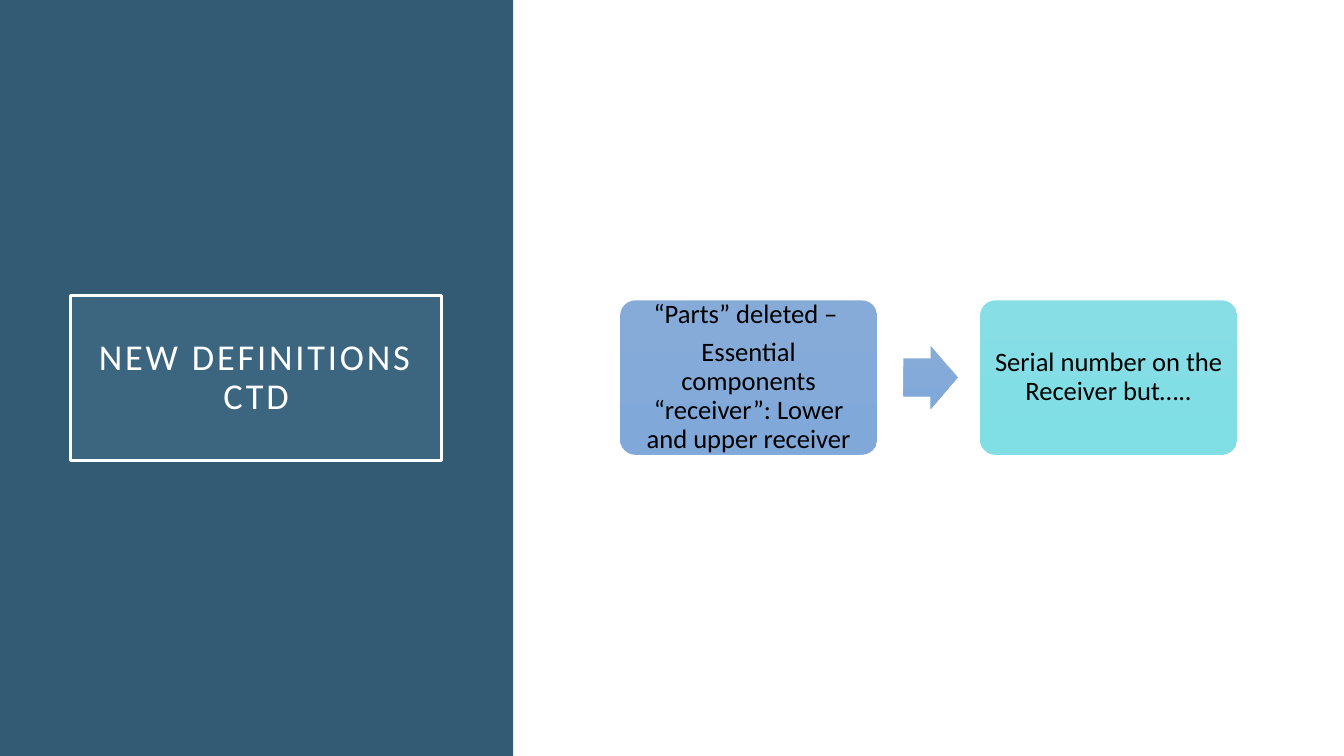
from dataclasses import dataclass

from lxml.etree import SubElement
from pptx import Presentation
from pptx.dml.color import RGBColor as RGB
from pptx.enum.shapes import MSO_SHAPE as Shape
from pptx.enum.text import MSO_ANCHOR as Anchor, PP_ALIGN as Align
from pptx.oxml.ns import qn
from pptx.util import Inches, Pt


@dataclass(frozen=True)
class Theme:
    font: str = "Calibri"
    panel: str = "335B74"
    tint: str = "70A1C0"
    white: str = "FFFFFF"
    black: str = "000000"
    blue: tuple = ("86ABD8", "80A8D8")
    aqua: tuple = ("87DEE5", "80DEE5")
    title: float = 26
    body: float = 19


THEME = Theme()


def add_box(slide, kind, left, top, width, height, fill, adjust=()):
    """Add a preset shape; a pair of colours gives a vertical gradient."""
    box = slide.shapes.add_shape(
        kind, Inches(left), Inches(top), Inches(width), Inches(height))
    box.shadow.inherit = False
    box.line.fill.background()
    for i, value in enumerate(adjust):
        box.adjustments[i] = value
    if isinstance(fill, tuple):
        box.fill.gradient()
        box.fill.gradient_angle = 270
        for stop, color in zip(box.fill.gradient_stops, fill):
            stop.color.rgb = RGB.from_string(color)
    else:
        box.fill.solid()
        box.fill.fore_color.rgb = RGB.from_string(fill)
    return box


def set_text(box, text, size, color, inset, after=0, spacing=0):
    frame = box.text_frame
    frame.text = text
    frame.word_wrap = True
    frame.vertical_anchor = Anchor.MIDDLE
    frame.margin_left = frame.margin_right = Inches(inset)
    frame.margin_top = frame.margin_bottom = Inches(inset)
    for para in frame.paragraphs:
        para.alignment = Align.CENTER
        para.line_spacing = 0.9
        para.space_after = Pt(after)
        for run in para.runs:
            run.font.name = THEME.font
            run.font.size = Pt(size)
            run.font.color.rgb = RGB.from_string(color)
            if spacing:
                run.font._element.set("spc", str(spacing * 100))


def add_title(slide, text):
    box = add_box(slide, Shape.RECTANGLE, 0.7, 2.93, 3.68, 1.64, THEME.tint)
    tint = box.fill._xPr.find(qn("a:solidFill"))[0]
    SubElement(tint, qn("a:alpha")).set("val", "15000")
    box.line.color.rgb = RGB.from_string(THEME.white)
    box.line.width = Pt(2.5)
    set_text(box, text, THEME.title, THEME.white, 0.2, spacing=2)


def add_step(slide, left, text, fill):
    box = add_box(slide, Shape.ROUNDED_RECTANGLE, left, 2.98, 2.55, 1.53,
                  fill, [0.1])
    set_text(box, text, THEME.body, THEME.black, 0.08, after=6.65)


def main():
    deck = Presentation()
    deck.slide_width, deck.slide_height = Inches(13.33), Inches(7.5)
    slide = deck.slides.add_slide(deck.slide_layouts[6])

    add_box(slide, Shape.RECTANGLE, 0, 0, 5.09, 7.5, THEME.panel)
    add_title(slide, "NEW DEFINITIONS CTD")
    add_step(slide, 6.15, "“Parts” deleted – \nEssential components "
             "“receiver”: Lower and upper receiver", THEME.blue)
    add_box(slide, Shape.RIGHT_ARROW, 8.96, 3.43, 0.54, 0.63,
            THEME.blue, [0.6, 0.5])
    add_step(slide, 9.72, "Serial number on the Receiver but…..", THEME.aqua)

    deck.save("out.pptx")


if __name__ == "__main__":
    main()
